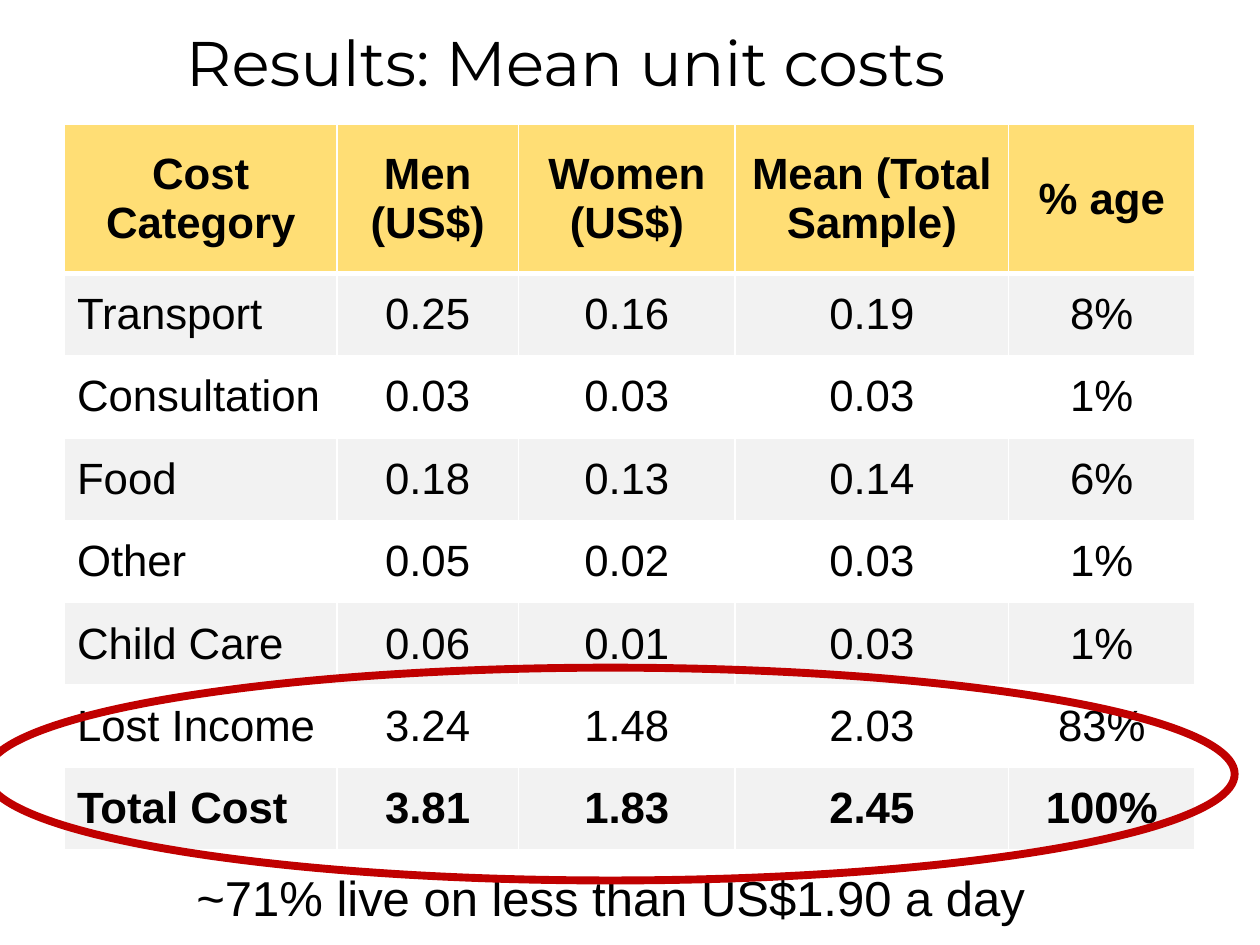
from dataclasses import dataclass

from lxml.etree import SubElement
from pptx import Presentation
from pptx.dml.color import RGBColor
from pptx.enum.shapes import MSO_SHAPE as Preset
from pptx.enum.text import MSO_ANCHOR as Anchor, PP_ALIGN as Align
from pptx.oxml.ns import qn
from pptx.util import Cm, Pt


@dataclass(frozen=True)
class Theme:
    ink: str = "000000"
    header: str = "FFDE75"
    band: str = "F2F2F2"
    rule: str = "FFFFFF"
    highlight: str = "C00000"
    heading_font: str = "Montserrat"
    body_font: str = "Arial"
    title_size: float = 36
    table_size: float = 25
    takeaway_size: float = 28


THEME = Theme()

COLUMN_WIDTHS = (5.49, 3.66, 4.37, 5.51, 3.76)
HEADER_HEIGHT, ROW_HEIGHT = 3.0, 1.66
COSTS = (
    ("Cost Category", "Men (US$)", "Women (US$)", "Mean (Total Sample)", "% age"),
    ("Transport", "0.25", "0.16", "0.19", "8%"),
    ("Consultation", "0.03", "0.03", "0.03", "1%"),
    ("Food", "0.18", "0.13", "0.14", "6%"),
    ("Other", "0.05", "0.02", "0.03", "1%"),
    ("Child Care", "0.06", "0.01", "0.03", "1%"),
    ("Lost Income", "3.24", "1.48", "2.03", "83%"),
    ("Total Cost", "3.81", "1.83", "2.45", "100%"),
)


def write(frame, text, size, font=THEME.body_font, bold=False,
          align=Align.LEFT, spacing=None):
    """Put one formatted paragraph into a text frame."""
    paragraph = frame.paragraphs[0]
    paragraph.alignment = align
    if spacing:
        paragraph.line_spacing = spacing
    run = paragraph.add_run()
    run.text = text
    run.font.name = font
    run.font.size = Pt(size)
    run.font.bold = bold
    run.font.color.rgb = RGBColor.from_string(THEME.ink)


def add_text(slide, box, text, size, anchor=Anchor.TOP, **style):
    frame = slide.shapes.add_textbox(*map(Cm, box)).text_frame
    frame.word_wrap = True
    frame.vertical_anchor = anchor
    write(frame, text, size, **style)


def add_borders(cell, **widths):
    """Draw the cell borders; widths in points by side (L, R, T, B)."""
    properties = cell._tc.get_or_add_tcPr()
    for side, width in widths.items():
        line = SubElement(properties, qn(f"a:ln{side}"), w=str(Pt(width)))
        fill = SubElement(line, qn("a:solidFill"))
        SubElement(fill, qn("a:srgbClr"), val=THEME.rule)


def add_cost_table(slide, left, top):
    height = HEADER_HEIGHT + ROW_HEIGHT * (len(COSTS) - 1)
    costs = slide.shapes.add_table(
        len(COSTS), len(COLUMN_WIDTHS),
        Cm(left), Cm(top), Cm(sum(COLUMN_WIDTHS)), Cm(height)).table
    for column, width in zip(costs.columns, COLUMN_WIDTHS):
        column.width = Cm(width)

    last = len(COSTS) - 1
    for r, entries in enumerate(COSTS):
        is_header = r == 0
        costs.rows[r].height = Cm(HEADER_HEIGHT if is_header else ROW_HEIGHT)
        for c, entry in enumerate(entries):
            cell = costs.cell(r, c)
            cell.vertical_anchor = Anchor.MIDDLE
            add_borders(cell, L=1, R=1, T=3 if r == 1 else 1,
                        B=3 if is_header else 1)
            # Header colour, then a band on every odd row
            if is_header or r % 2:
                cell.fill.solid()
                cell.fill.fore_color.rgb = RGBColor.from_string(
                    THEME.header if is_header else THEME.band)
            else:
                cell.fill.background()
            write(cell.text_frame, entry, THEME.table_size,
                  bold=r in (0, last),
                  align=Align.CENTER if is_header or c else Align.LEFT)


def add_highlight(slide, box):
    ring = slide.shapes.add_shape(Preset.OVAL, *map(Cm, box))
    ring.shadow.inherit = False
    ring.fill.background()
    ring.line.color.rgb = RGBColor.from_string(THEME.highlight)
    ring.line.width = Pt(4.5)


def main():
    deck = Presentation()
    deck.slide_width, deck.slide_height = Cm(25.4), Cm(19.05)
    slide = deck.slides.add_slide(deck.slide_layouts[6])

    # Title
    add_text(slide, (3.5, -0.5, 21.9, 3.68), "Results: Mean unit costs",
             THEME.title_size, anchor=Anchor.MIDDLE,
             font=THEME.heading_font, spacing=0.9)
    # Unit costs by category
    add_cost_table(slide, 1.3, 2.51)
    # Takeaway below the table
    add_text(slide, (3.71, 17.37, 18.72, 1.45),
             "~71% live on less than US$1.90 a day", THEME.takeaway_size)
    # Ring around lost income and total cost
    add_highlight(slide, (-0.28, 13.46, 25.17, 4.29))

    deck.save("out.pptx")


if __name__ == "__main__":
    main()
